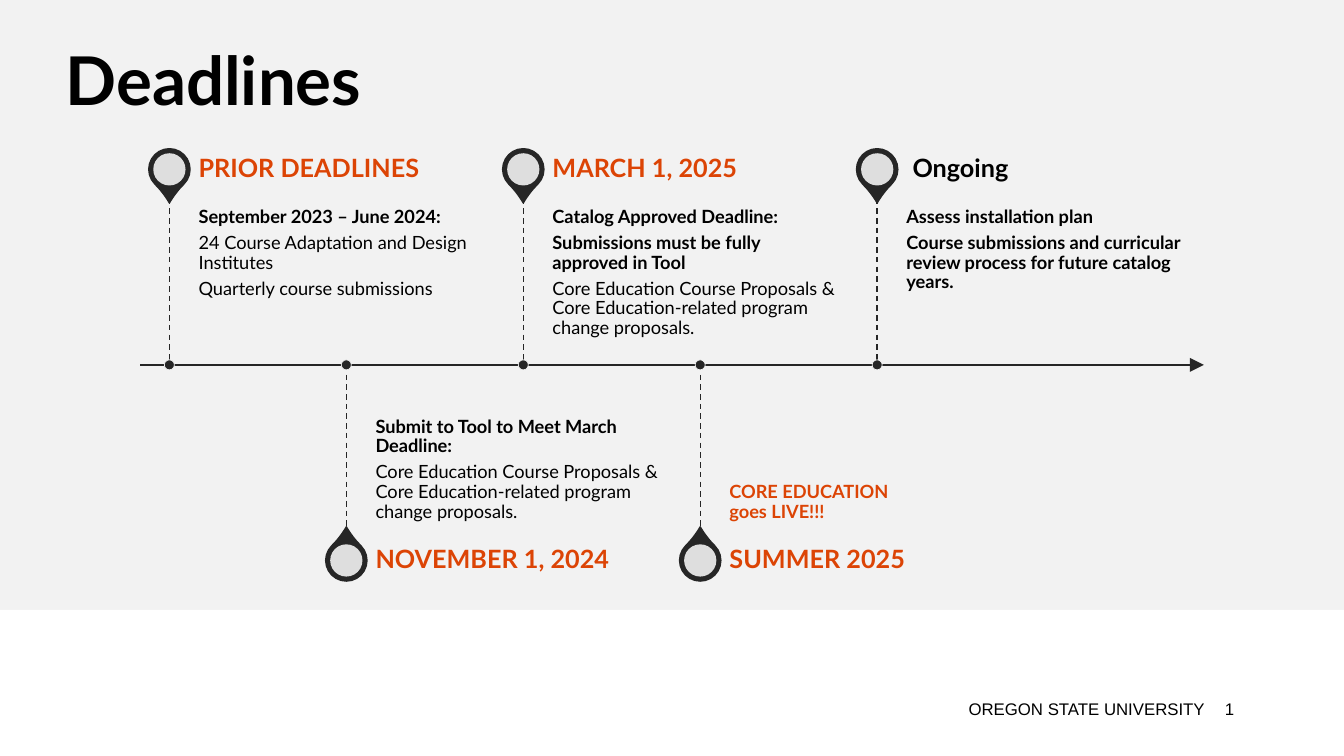
from dataclasses import dataclass

from lxml import etree
from pptx import Presentation
from pptx.dml.color import RGBColor
from pptx.enum.dml import MSO_LINE
from pptx.enum.shapes import MSO_CONNECTOR, MSO_SHAPE
from pptx.enum.text import MSO_ANCHOR, MSO_AUTO_SIZE, PP_ALIGN
from pptx.oxml.ns import qn
from pptx.util import Inches, Pt

STRAIGHT = MSO_CONNECTOR.STRAIGHT
DASH = MSO_LINE.DASH
RECTANGLE, OVAL, TEAR = MSO_SHAPE.RECTANGLE, MSO_SHAPE.OVAL, MSO_SHAPE.TEAR
TOP, MIDDLE, BOTTOM = MSO_ANCHOR.TOP, MSO_ANCHOR.MIDDLE, MSO_ANCHOR.BOTTOM
LEFT, RIGHT = PP_ALIGN.LEFT, PP_ALIGN.RIGHT

WIDTH, HEIGHT = 13.33, 7.5
BLACK, DARK, PALE, WHITE, ORANGE = "000000", "262626", "F2F2F2", "FFFFFF", "DC4405"

AXIS_Y, AXIS_START, AXIS_END = 3.62, 1.39, 11.94
FIRST_STOP, LAST_STOP = 1.68, 8.7
STEM, HEADING_HEIGHT, TEXT_OFFSET, TEXT_WIDTH = 1.65, 0.58, 0.29, 2.93
PIN, PIN_HOLE, DOT = 0.41, 0.32, 0.1


@dataclass
class Milestone:
    """One stop: its heading, and its lines as (text, bold) pairs."""
    heading: str
    lines: list
    heading_color: str = ORANGE
    line_color: str = BLACK


PROPOSALS = "Core Education Course Proposals & Core Education-related program change proposals."
MILESTONES = [
    Milestone("PRIOR DEADLINES", [
        ("September 2023 – June 2024:", True),
        ("24 Course Adaptation and Design Institutes", False),
        ("Quarterly course submissions", False)]),
    Milestone("NOVEMBER 1, 2024", [
        ("Submit to Tool to Meet March Deadline:", True),
        (PROPOSALS, False)]),
    Milestone("MARCH 1, 2025", [
        ("Catalog Approved Deadline:", True),
        ("Submissions must be fully approved in Tool", True),
        (PROPOSALS, False)]),
    Milestone("SUMMER 2025", [("CORE EDUCATION \vgoes LIVE!!!", True)], line_color=ORANGE),
    Milestone(" Ongoing", [
        ("Assess installation plan", True),
        ("Course submissions and curricular review process for future catalog years.", True)],
        heading_color=BLACK),
]


def rgb(color):
    """Turn a hex string into a colour."""
    return RGBColor.from_string(color)


def style(font, size, color, bold=False, name="Lato"):
    """Set the face, size, colour and weight of a font."""
    font.name, font.size, font.bold = name, Pt(size), bold
    font.color.rgb = rgb(color)


def add_text(page, box, lines, size, color, anchor=MIDDLE, insets=(0, 0, 0.12, 0)):
    """Place a Lato text box holding (text, bold) lines."""
    frame = page.shapes.add_textbox(*map(Inches, box)).text_frame
    frame.word_wrap = True
    frame.vertical_anchor = anchor
    frame.margin_left, frame.margin_top, frame.margin_right, frame.margin_bottom = map(Inches, insets)
    frame.text = "\n".join(text for text, bold in lines)
    for para, (text, bold) in zip(frame.paragraphs, lines):
        para.line_spacing = 0.9
        para.space_after = Pt(size * 0.35)
        for span in para.runs:
            style(span.font, size, color, bold)


def add_filled(page, kind, box, fill, line=None, weight=1):
    """Place a flat shape, outlined only when a line colour is given."""
    shape = page.shapes.add_shape(kind, *map(Inches, box))
    shape.shadow.inherit = False
    shape.fill.solid()
    shape.fill.fore_color.rgb = rgb(fill)
    if line:
        shape.line.color.rgb = rgb(line)
        shape.line.width = Pt(weight)
    else:
        shape.line.fill.background()
    return shape


def add_centered(page, kind, x, y, size, *paint):
    """Place a square-boxed shape around a centre point."""
    return add_filled(page, kind, (x - size / 2, y - size / 2, size, size), *paint)


def add_line(page, start, end, weight):
    """Draw a straight dark line without a shadow."""
    line = page.shapes.add_connector(STRAIGHT, *map(Inches, start + end))
    line.line.color.rgb = rgb(DARK)
    line.line.width = Pt(weight)
    etree.SubElement(line._element.spPr, qn("a:effectLst"))
    return line


def add_title(page, box):
    """Format the title placeholder."""
    title = page.shapes.title
    title.left, title.top, title.width, title.height = map(Inches, box)
    frame = title.text_frame
    frame.text = "Deadlines"
    frame.auto_size = MSO_AUTO_SIZE.NONE
    frame.vertical_anchor = MIDDLE
    para = frame.paragraphs[0]
    para.alignment, para.line_spacing = LEFT, 0.9
    style(para.runs[0].font, 48, BLACK, True)


def add_footer(page, box):
    """Place the white band with the university name and page number."""
    add_filled(page, RECTANGLE, box, WHITE)
    text_top = box[1] + 0.78
    cells = [("OREGON STATE UNIVERSITY", 4.74, 7.31, RIGHT), ("1", 12.05, 0.69, LEFT)]
    for text, left, width, alignment in cells:
        frame = page.shapes.add_textbox(*map(Inches, (left, text_top, width, 0.4))).text_frame
        frame.word_wrap = True
        frame.vertical_anchor = MIDDLE
        frame.text = text
        para = frame.paragraphs[0]
        para.alignment = alignment
        style(para.runs[0].font, 12, BLACK, name="Arial")


def add_pin(page, x, y, rotation):
    """Place a map pin around a centre point, its tip turned by the rotation."""
    pin = add_centered(page, TEAR, x, y, PIN, DARK, DARK)
    pin.adjustments[0] = 1.15
    pin.rotation = rotation
    hole = add_centered(page, OVAL, x, y, PIN_HOLE, PALE)
    color = hole._element.spPr.find(qn("a:solidFill"))[0]
    etree.SubElement(color, qn("a:alpha"), val="90000")


def add_milestone(page, x, above, milestone):
    """Place one stop above or below the axis."""
    if above:
        body_top, heading_top = AXIS_Y - STEM, AXIS_Y - STEM - HEADING_HEIGHT
        stem_end, rotation, anchor = body_top, 135, TOP
        insets = (0, 0.09, 0.09, 0.14)
    else:
        body_top, heading_top = AXIS_Y, AXIS_Y + STEM
        stem_end, rotation, anchor = heading_top, 315, BOTTOM
        insets = (0, 0.14, 0, 0.09)
    text_left = x + TEXT_OFFSET
    add_pin(page, x, heading_top + HEADING_HEIGHT / 2, rotation)
    add_text(page, (text_left, body_top, TEXT_WIDTH, STEM), milestone.lines, 13,
             milestone.line_color, anchor, insets)
    add_text(page, (text_left, heading_top, TEXT_WIDTH, HEADING_HEIGHT),
             [(milestone.heading, True)], 18, milestone.heading_color)
    stem = add_line(page, (x, min(AXIS_Y, stem_end)), (x, max(AXIS_Y, stem_end)), 1)
    stem.line.dash_style = DASH
    add_centered(page, OVAL, x, AXIS_Y, DOT, DARK, PALE, 0.5)


def add_timeline(page):
    """Draw the axis arrow and the stops, alternating above and below it."""
    axis = add_line(page, (AXIS_START, AXIS_Y), (AXIS_END, AXIS_Y), 1.5)
    etree.SubElement(axis.line._get_or_add_ln(), qn("a:tailEnd"), type="triangle", w="lg", len="lg")
    gap = (LAST_STOP - FIRST_STOP) / (len(MILESTONES) - 1)
    for index, milestone in enumerate(MILESTONES):
        add_milestone(page, FIRST_STOP + index * gap, index % 2 == 0, milestone)


def main():
    """Build the deadlines slide and save it."""
    deck = Presentation()
    deck.slide_width, deck.slide_height = Inches(WIDTH), Inches(HEIGHT)
    page = deck.slides.add_slide(deck.slide_layouts[5])
    page.background.fill.solid()
    page.background.fill.fore_color.rgb = rgb(PALE)
    add_footer(page, (0, 6.05, WIDTH, 1.45))
    add_title(page, (0.55, 0.11, 11.5, 1.45))
    add_timeline(page)
    deck.save("out.pptx")


if __name__ == "__main__":
    main()
